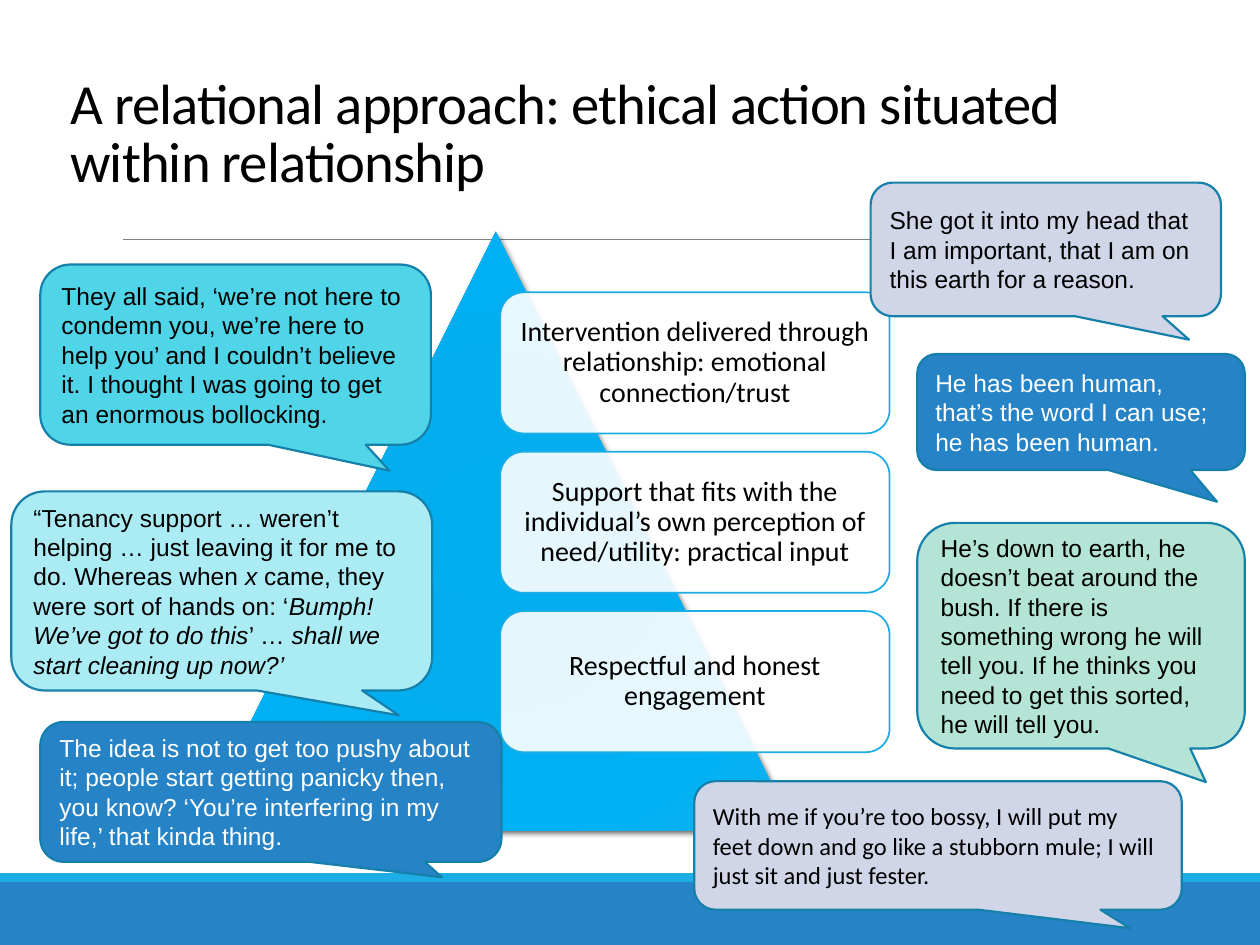
from lxml import etree
from pptx import Presentation, util as u
from pptx.dml.color import RGBColor
from pptx.enum import shapes, text
from pptx.oxml import parse_xml
from pptx.oxml.ns import nsdecls, qn

SHAPE = shapes.MSO_SHAPE
ANCHOR = text.MSO_ANCHOR
ALIGN = text.PP_ALIGN
BLUE, SKY, EDGE, LILAC = "2683C6", "1CADE4", "1580A9", "D0D5E7"


def color(value):
    return RGBColor.from_string(value)


def add_shape(s, kind, box, fill, line=None, width=1):
    sp = s.shapes.add_shape(kind, *map(u.Inches, box))
    sp.shadow.inherit = False
    sp.fill.solid()
    sp.fill.fore_color.rgb = color(fill)
    if line:
        sp.line.color.rgb = color(line)
        sp.line.width = u.Pt(width)
    else:
        sp.line.fill.background()
    return sp


def write(sp, words, size, font="Calibri", ink="000000", align=ALIGN.LEFT,
          anchor=ANCHOR.MIDDLE, spacing=1.0):
    """Fill a shape with one paragraph; parts between asterisks are italic."""
    tf = sp.text_frame
    tf.word_wrap = True
    tf.vertical_anchor = anchor
    p = tf.paragraphs[0]
    p.alignment = align
    p.line_spacing = spacing
    for i, part in enumerate(words.split("*")):
        r = p.add_run()
        r.text = part
        r.font.size = u.Pt(size)
        r.font.name = font
        r.font.color.rgb = color(ink)
        if i % 2:
            r.font.italic = True
    return p


def add_footer(s, left, top, width, height):
    strip = 0.07
    add_shape(s, SHAPE.RECTANGLE, (left, top, width, height), BLUE)
    add_shape(s, SHAPE.RECTANGLE, (left, top - strip, width, strip), SKY)


def add_title(s, left, top, width, height):
    # Rule below the title
    rule = s.shapes.add_connector(shapes.MSO_CONNECTOR.STRAIGHT, u.Inches(0.98),
                                  u.Inches(1.9), u.Inches(9.15), u.Inches(1.9))
    rule.line.color.rgb = color("808080")
    rule.line.width = u.Pt(0.5)
    etree.SubElement(rule._element.spPr, qn("a:effectLst"))

    sp = s.shapes.add_textbox(*map(u.Inches, (left, top, width, height)))
    p = write(sp, "A relational approach: ethical action situated within relationship",
              32.4, anchor=ANCHOR.BOTTOM, spacing=0.85)
    p.runs[0]._r.get_or_add_rPr().set("spc", "-50")


def add_pyramid(s, left, top, size):
    # Triangle with a radial gradient and a soft shadow
    sp = add_shape(s, SHAPE.ISOSCELES_TRIANGLE, (left, top, size, size), "00B1F5")
    stops = ((0, "00ADEF"), (34, "03ADEE"), (70, "00B1F5"), (100, "12B1EE"))
    gs = "".join(f'<a:gs pos="{pos * 1000}"><a:srgbClr val="{c}"/></a:gs>'
                 for pos, c in stops)
    pr = sp._element.spPr
    pr.replace(pr.find(qn("a:solidFill")), parse_xml(
        f'<a:gradFill {nsdecls("a")}><a:gsLst>{gs}</a:gsLst><a:path path="circle">'
        '<a:fillToRect l="100000" t="100000" r="100000" b="100000"/></a:path></a:gradFill>'))
    pr.replace(pr.find(qn("a:effectLst")), parse_xml(
        f'<a:effectLst {nsdecls("a")}><a:outerShdw blurRad="38100" dist="25400" '
        'dir="2700000" rotWithShape="0"><a:srgbClr val="000000"><a:alpha val="60000"/>'
        '</a:srgbClr></a:outerShdw></a:effectLst>'))

    # Translucent levels, evenly stacked
    levels = ("Intervention delivered through relationship: emotional connection/trust",
              "Support that fits with the individual’s own perception of need/utility: "
              "practical input",
              "Respectful and honest engagement")
    for i, words in enumerate(levels):
        box = (left + 2.41, top + 0.48 + i * 1.265, 3.09, 1.12)
        sp = add_shape(s, SHAPE.ROUNDED_RECTANGLE, box, "FFFFFF", SKY)
        clr = sp._element.spPr.find(qn("a:solidFill"))[0]
        etree.SubElement(clr, qn("a:alpha")).set("val", "90000")
        tf = sp.text_frame
        tf.margin_left = tf.margin_right = u.Inches(0.07)
        tf.margin_top = tf.margin_bottom = u.Inches(0.07)
        write(sp, words, 16, align=ALIGN.CENTER, spacing=0.9)


def add_quote(s, box, tail, fill, words, ink="000000", font="Arial"):
    sp = add_shape(s, SHAPE.ROUNDED_RECTANGULAR_CALLOUT, box, fill, EDGE, 1.25)
    sp.adjustments[0], sp.adjustments[1] = tail
    sp.adjustments[2] = 0.167
    write(sp, words, 14, font, ink)


# Each quote: box, tail tip, fill, words, then ink and font where they differ
QUOTES = [
    ((5.51, 6.2, 3.87, 1.02), (0.394, 0.644), LILAC,
     "With me if you’re too bossy, I will put my feet down and go like a stubborn mule; "
     "I will just sit and just fester.", "000000", "Calibri"),
    ((0.32, 5.73, 3.66, 1.11), (0.371, 0.61), BLUE,
     "The idea is not to get too pushy about it; people start getting panicky then, "
     "you know? ‘You’re interfering in my life,’ that kinda thing.", "FFFFFF"),
    ((7.28, 4.15, 2.6, 1.79), (0.381, 0.649), "B3E4D6",
     "He’s down to earth, he doesn’t beat around the bush. If there is something wrong "
     "he will tell you. If he thinks you need to get this sorted, he will tell you."),
    ((6.91, 1.45, 2.78, 1.06), (0.409, 0.676), LILAC,
     "She got it into my head that I am important, that I am on this earth for a reason."),
    ((7.28, 2.81, 2.6, 0.92), (0.415, 0.774), BLUE,
     "He has been human, that’s the word I can use; he has been human.", "FFFFFF"),
    ((0.32, 2.1, 3.1, 1.43), (0.394, 0.644), "4FD5E7",
     "They all said, ‘we’re not here to condemn you, we’re here to help you’ and I "
     "couldn’t believe it. I thought I was going to get an enormous bollocking."),
    ((0.09, 3.9, 3.34, 1.58), (0.421, 0.625), "AAEBF4",
     "“Tenancy support … weren’t helping … just leaving it for me to do. Whereas when "
     "*x* came, they were sort of hands on: ‘*Bumph! We’ve got to do this*’ … "
     "*shall we start cleaning up now?’*"),
]


def main():
    prs = Presentation()
    prs.slide_width, prs.slide_height = u.Inches(10), u.Inches(7.5)
    s = prs.slides.add_slide(prs.slide_layouts[6])
    add_footer(s, 0, 7, 10, 0.5)
    add_title(s, 0.46, 0.51, 9, 1.08)
    add_pyramid(s, 1.56, 1.84, 4.75)
    for quote in QUOTES:
        add_quote(s, *quote)
    prs.save("out.pptx")


if __name__ == "__main__":
    main()
